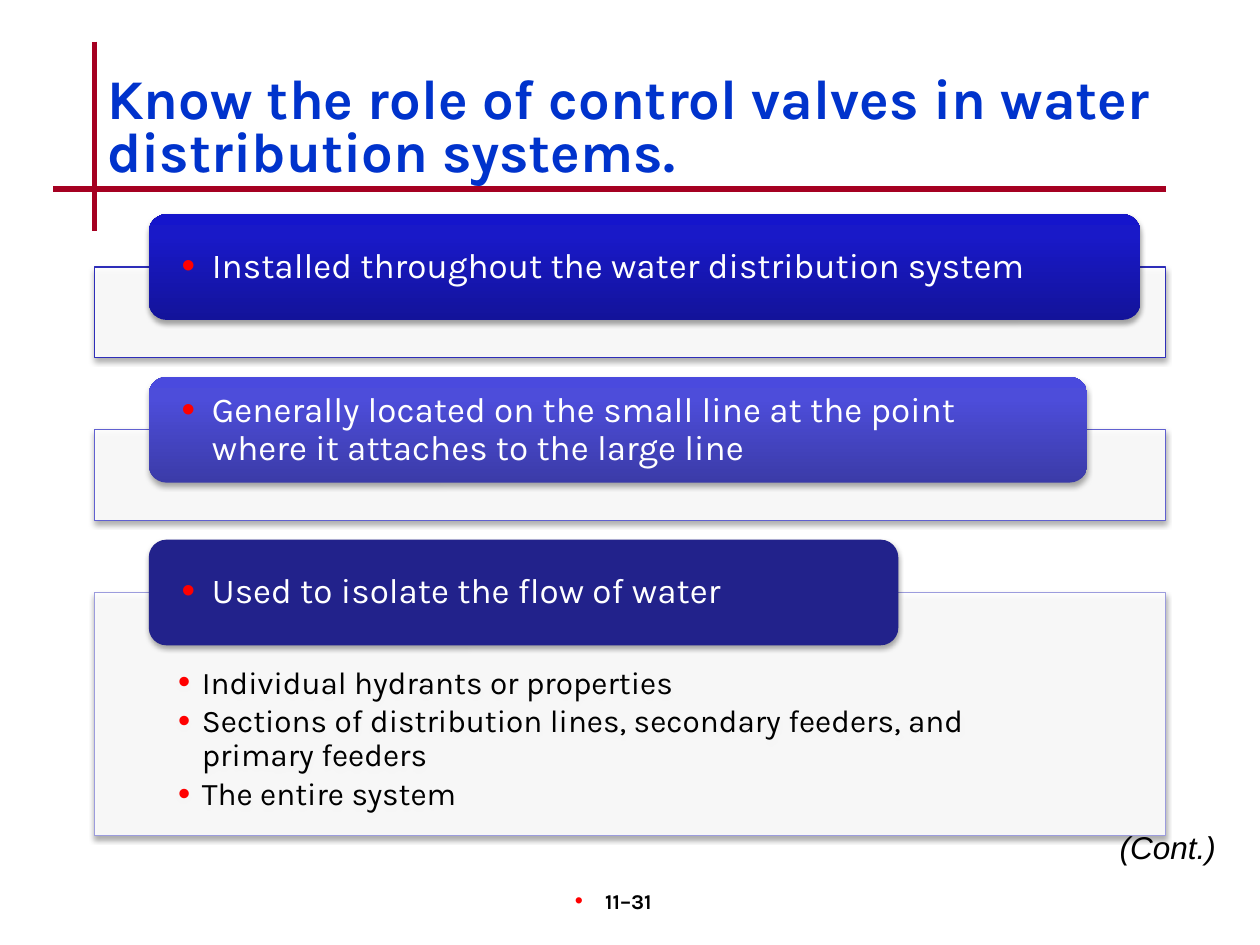
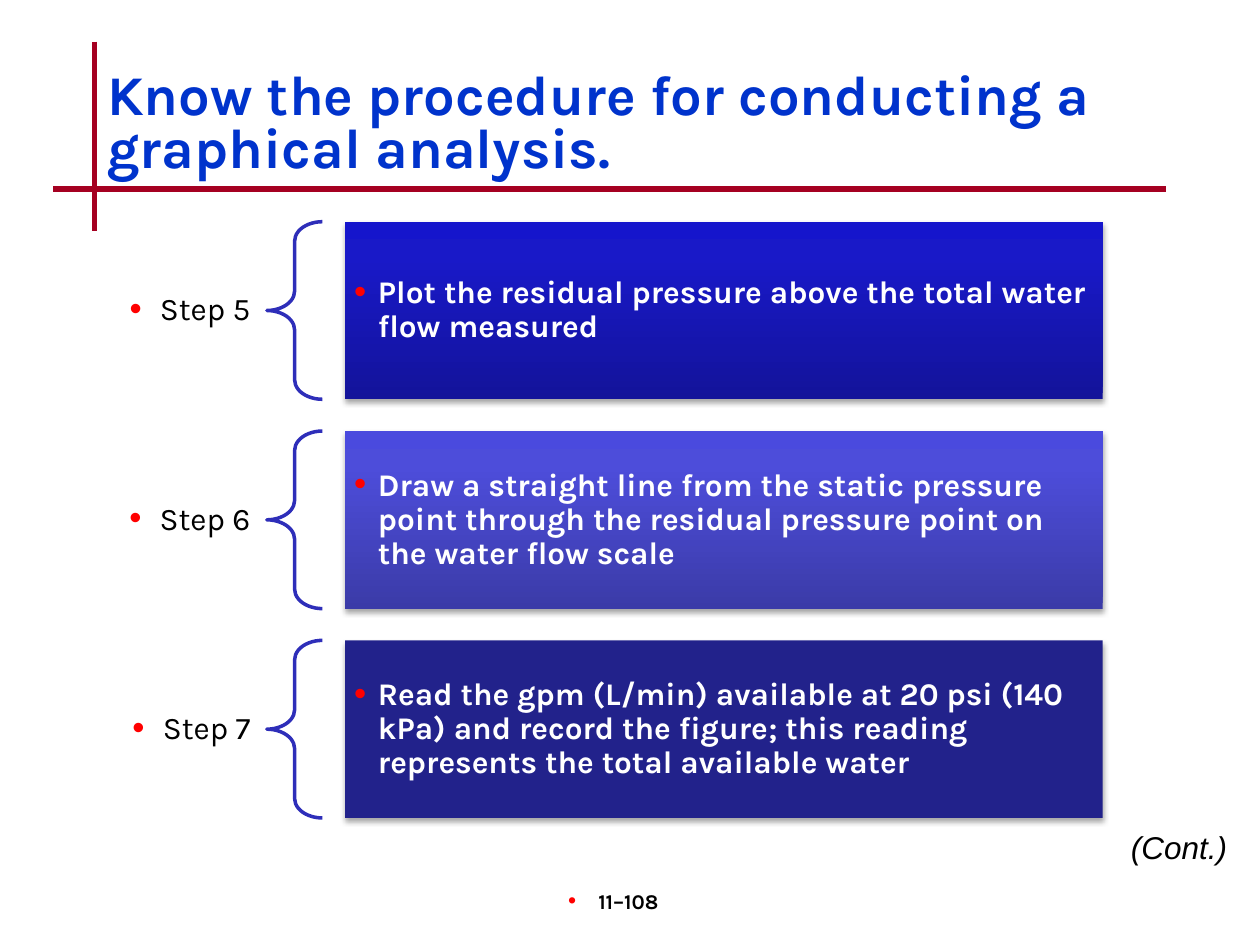
"""Build two training slides on water distribution and flow analysis."""
from copy import deepcopy
from dataclasses import dataclass

from lxml import etree
from pptx import Presentation
from pptx.dml.color import RGBColor
from pptx.enum.shapes import MSO_CONNECTOR, MSO_SHAPE
from pptx.enum.text import MSO_ANCHOR, PP_ALIGN
from pptx.oxml.ns import qn
from pptx.util import Cm, Pt

RECTANGLE = MSO_SHAPE.RECTANGLE
ROUNDED = MSO_SHAPE.ROUNDED_RECTANGLE
BRACE = MSO_SHAPE.LEFT_BRACE
STRAIGHT = MSO_CONNECTOR.STRAIGHT
TOP, MIDDLE = MSO_ANCHOR.TOP, MSO_ANCHOR.MIDDLE
LEFT, CENTER, RIGHT = PP_ALIGN.LEFT, PP_ALIGN.CENTER, PP_ALIGN.RIGHT

WHITE = RGBColor(0xFF, 0xFF, 0xFF)
BLACK = RGBColor(0x00, 0x00, 0x00)
RED = RGBColor(0xFF, 0x00, 0x00)
CRIMSON = RGBColor(0xA5, 0x00, 0x21)
TITLE_BLUE = RGBColor(0x00, 0x33, 0xCC)
BLUE = RGBColor(0x2E, 0x2E, 0xB9)
MID_BLUE = RGBColor(0x60, 0x60, 0xD0)
PALE_BLUE = RGBColor(0x9C, 0x9C, 0xDD)
DEEP_FILL = (RGBColor(0x13, 0x13, 0x9A), RGBColor(0x19, 0x19, 0xC8), RGBColor(0x15, 0x15, 0xCC))
BRIGHT_FILL = (RGBColor(0x3B, 0x3B, 0xA8), RGBColor(0x4D, 0x4D, 0xDA), RGBColor(0x4A, 0x4A, 0xDE))
NAVY_FILL = (RGBColor(0x22, 0x22, 0x8B),)
GRADIENT_POSITIONS = (0, 0.8, 1)

BODY_FONT, NOTE_FONT = "Karla", "Arial"
DEFAULT_INSETS = (0.25, 0.13, 0.25, 0.13)
LEFT_EDGE, CONTENT_WIDTH = 1.91, 21.59
BULLET_INDENT, SUB_INDENT = 0.61, 0.48


@dataclass(frozen=True)
class Box:
    """Position and size in centimetres."""
    left: float
    top: float
    width: float
    height: float

    def lengths(self) -> tuple:
        """Return the four values as lengths."""
        return Cm(self.left), Cm(self.top), Cm(self.width), Cm(self.height)


@dataclass(frozen=True)
class Point:
    """A headed panel with optional details."""
    heading: str
    heading_width: float
    fill: tuple
    outline: RGBColor
    panel_height: float = 1.83
    details: tuple = ()


@dataclass(frozen=True)
class Step:
    """A numbered step and its instruction."""
    label: str
    instruction: str
    fill: tuple


POINTS = (
    Point("Installed throughout the water distribution system", 19.99, DEEP_FILL, BLUE),
    Point("Generally located on the small line at the point where it attaches to the large line",
          18.92, BRIGHT_FILL, MID_BLUE),
    Point("Used to isolate the flow of water", 15.11, NAVY_FILL, PALE_BLUE, 4.9,
          ("Individual hydrants or properties",
           "Sections of distribution lines, secondary feeders, and primary feeders",
           "The entire system")),
)
STEPS = (
    Step("Step 5", "Plot the residual pressure above the total water flow measured", DEEP_FILL),
    Step("Step 6", "Draw a straight line from the static pressure point through the residual "
         "pressure point on the water flow scale", BRIGHT_FILL),
    Step("Step 7", "Read the gpm (L/min) available at 20 psi (140 kPa) and record the figure; "
         "this reading represents the total available water", NAVY_FILL),
)


def add_bullet(paragraph, indent: float) -> None:
    """Give a paragraph a hanging red bullet."""
    properties = paragraph._p.get_or_add_pPr()
    properties.set("marL", str(Cm(indent)))
    properties.set("indent", str(-Cm(indent)))
    color = etree.SubElement(properties, qn("a:buClr"))
    etree.SubElement(color, qn("a:srgbClr"), val=str(RED))
    etree.SubElement(properties, qn("a:buSzPct"), val="110000")
    etree.SubElement(properties, qn("a:buFont"), typeface=NOTE_FONT)
    etree.SubElement(properties, qn("a:buChar"), char="•")


def write_text(shape, *texts: str, size: float = 18, color: RGBColor = BLACK, bold: bool = False,
               italic: bool = False, font: str = BODY_FONT, align=LEFT, anchor=MIDDLE,
               insets: tuple = DEFAULT_INSETS, indent: float = 0, spacing: float = 0.9,
               space_after: float = 0) -> None:
    """Fill a shape with one formatted paragraph per text."""
    frame = shape.text_frame
    frame.word_wrap = True
    frame.vertical_anchor = anchor
    (frame.margin_left, frame.margin_top,
     frame.margin_right, frame.margin_bottom) = map(Cm, insets)
    for index, text in enumerate(texts):
        paragraph = frame.add_paragraph() if index else frame.paragraphs[0]
        paragraph.alignment = align
        paragraph.line_spacing = spacing
        paragraph.space_after = Pt(space_after)
        if indent:
            add_bullet(paragraph, indent)
        run = paragraph.add_run()
        run.text = text
        run.font.size, run.font.name = Pt(size), font
        run.font.bold, run.font.italic = bold, italic
        run.font.color.rgb = color


def add_text(slide, box: Box, text: str, **text_format) -> None:
    """Add a text box."""
    write_text(slide.shapes.add_textbox(*box.lengths()), text, **text_format)


def add_rule(slide, *ends: float) -> None:
    """Draw a crimson line between two points."""
    connector = slide.shapes.add_connector(STRAIGHT, *map(Cm, ends))
    connector.line.color.rgb = CRIMSON
    connector.line.width = Pt(3)
    etree.SubElement(connector._element.spPr, qn("a:effectLst"))


def fill_shape(shape, colors: tuple) -> None:
    """Apply a solid fill or a three-stop vertical gradient."""
    if len(colors) == 1:
        shape.fill.solid()
        shape.fill.fore_color.rgb = colors[0]
        return
    shape.fill.gradient()
    shape.fill.gradient_angle = 90
    stop_list = shape._element.spPr.find(".//" + qn("a:gsLst"))
    stop_list.append(deepcopy(stop_list[-1]))
    for stop, position, color in zip(shape.fill.gradient_stops, GRADIENT_POSITIONS, colors):
        stop.position = position
        stop.color.rgb = color


def add_block(slide, kind, box: Box, colors: tuple, outline: RGBColor | None = None):
    """Add a filled shape with a soft shadow below it."""
    shape = slide.shapes.add_shape(kind, *box.lengths())
    fill_shape(shape, colors)
    if outline is None:
        shape.line.fill.background()
    else:
        shape.line.color.rgb = outline
        shape.line.width = Pt(0.75)
    shape.shadow.inherit = False
    effects = shape._element.spPr.find(qn("a:effectLst"))
    shadow = etree.SubElement(effects, qn("a:outerShdw"), blurRad=str(Pt(3.1)),
                              dist=str(Pt(1.8)), dir="5400000", rotWithShape="0")
    color = etree.SubElement(shadow, qn("a:srgbClr"), val=str(BLACK))
    etree.SubElement(color, qn("a:alpha"), val="35000")
    return shape


def add_base_slide(presentation, title: str, title_top: float, number: str, note_left: float):
    """Add a slide with the shared rules, title, number and continuation note."""
    slide = presentation.slides.add_slide(presentation.slide_layouts[6])
    add_rule(slide, LEFT_EDGE, 0.84, LEFT_EDGE, 4.65)
    add_rule(slide, 1.07, 3.81, 23.5, 3.81)
    add_text(slide, Box(9.96, 17.78, 5.28, 1.27), number, size=12, bold=True, align=CENTER,
             anchor=TOP, indent=BULLET_INDENT, insets=(0.25, 0.13, 0.72, 0.13), spacing=1)
    add_text(slide, Box(LEFT_EDGE, title_top, CONTENT_WIDTH, 2.54), title, size=32, bold=True,
             color=TITLE_BLUE, spacing=0.8)
    add_text(slide, Box(note_left, 16.56, 4.24, 1.02), "(Cont.)", italic=True, font=NOTE_FONT,
             align=RIGHT, anchor=TOP, spacing=1)
    return slide


def add_point(slide, point: Point, top: float) -> None:
    """Draw a panel with its heading overlapping the top edge."""
    heading_height = 2.13
    panel_box = Box(LEFT_EDGE, top + heading_height / 2, CONTENT_WIDTH, point.panel_height)
    panel = add_block(slide, RECTANGLE, panel_box, (WHITE,), point.outline)
    panel_color = panel._element.spPr.find(qn("a:solidFill"))[0]
    etree.SubElement(panel_color, qn("a:alpha"), val="90000")
    if point.details:
        write_text(panel, *point.details, anchor=TOP, insets=(1.68, 1.5, 1.68, 0.36),
                   indent=SUB_INDENT, space_after=2.7)
    heading_box = Box(3, top, point.heading_width, heading_height)
    heading = add_block(slide, ROUNDED, heading_box, point.fill)
    write_text(heading, point.heading, size=20, color=WHITE, insets=(0.56, 0, 0.56, 0),
               indent=BULLET_INDENT)


def add_step(slide, step: Step, top: float) -> None:
    """Draw a step label, its brace and its instruction."""
    height = 3.58
    add_text(slide, Box(-0.2, top, 5.61, height), step.label, align=RIGHT,
             insets=(0.36, 0.13, 0.36, 0.13), indent=BULLET_INDENT)
    brace = slide.shapes.add_shape(BRACE, *Box(5.38, top, 1.12, height).lengths())
    brace.adjustments[0] = 0.35
    brace.fill.background()
    brace.line.color.rgb = BLUE
    brace.line.width = Pt(2)
    brace.shadow.inherit = False
    block = add_block(slide, RECTANGLE, Box(6.96, top, 15.27, height), step.fill)
    write_text(block, step.instruction, color=WHITE, bold=True, insets=(0.18,) * 4,
               indent=SUB_INDENT)


def main() -> None:
    """Build and save the presentation."""
    presentation = Presentation()
    presentation.slide_width, presentation.slide_height = Cm(25.4), Cm(19.05)

    valves = add_base_slide(
        presentation, "Know the role of control valves in water distribution systems.",
        1.35, "11–31", 20.52)
    for index, point in enumerate(POINTS):
        add_point(valves, point, 4.32 + 3.28 * index)

    analysis = add_base_slide(
        presentation, "Know the procedure for conducting a graphical analysis.",
        1.27, "11–108", 20.75)
    for index, step in enumerate(STEPS):
        add_step(analysis, step, 4.47 + 4.22 * index)

    presentation.save("out.pptx")


if __name__ == "__main__":
    main()
